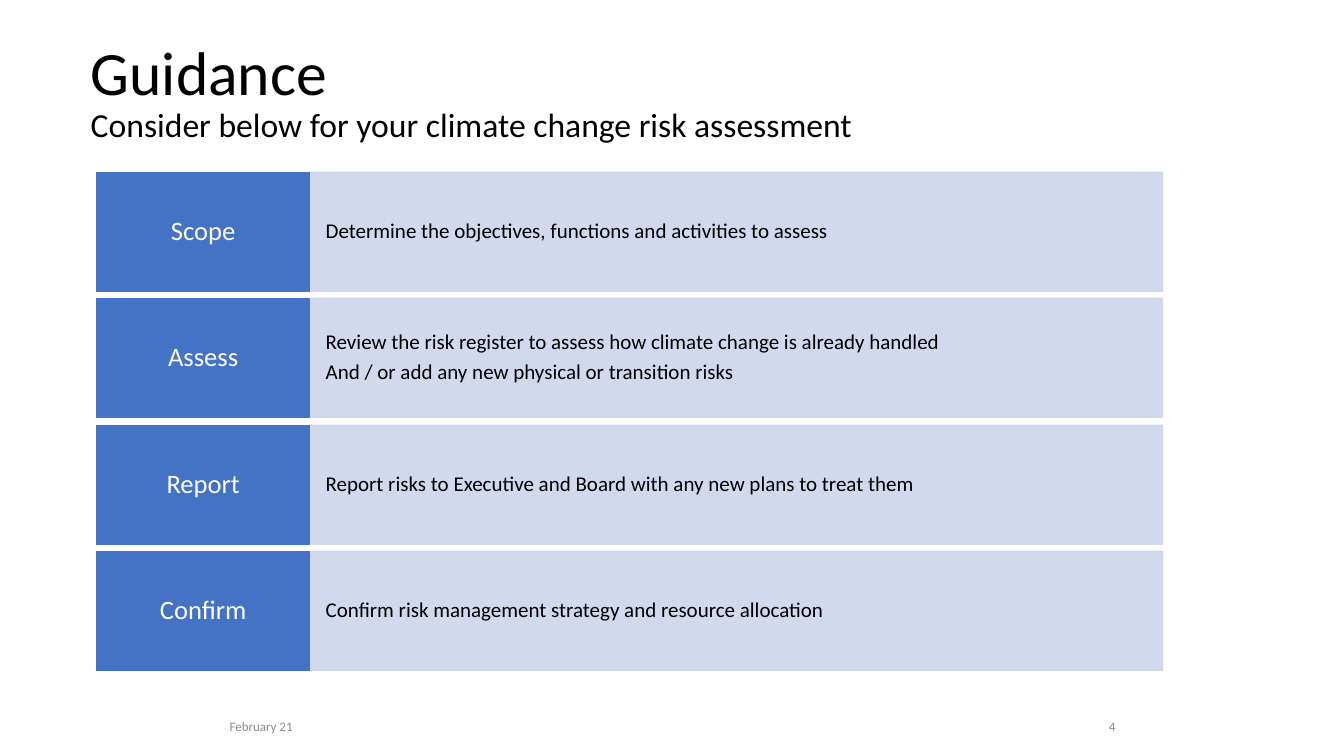
from pptx import Presentation, util as u
from pptx.dml.color import RGBColor
from pptx.enum import shapes, text
from pptx.oxml import parse_xml
from pptx.oxml.ns import nsdecls, qn

BLACK = RGBColor(0, 0, 0)
WHITE = RGBColor(255, 255, 255)
GREY = RGBColor(0x8C, 0x8C, 0x8C)
BLUE = RGBColor(0x44, 0x72, 0xC4)
PALE_BLUE = RGBColor(0xCF, 0xD5, 0xEA)

LEFT, CENTER, RIGHT = text.PP_ALIGN.LEFT, text.PP_ALIGN.CENTER, text.PP_ALIGN.RIGHT
STEPS = [
    ("Scope", ["Determine the objectives, functions and activities to assess"]),
    ("Assess", ["Review the risk register to assess how climate change is already handled",
                "And / or add any new physical or transition risks"]),
    ("Report", ["Report risks to Executive and Board with any new plans to treat them"]),
    ("Confirm", ["Confirm risk management strategy and resource allocation"]),
]


def px(count):
    return u.Emu(count * 9144)


def write(frame, lines, sizes, color=BLACK, align=LEFT, spacing=0.9, after=0, inset=(10, 5)):
    frame.word_wrap = True
    frame.auto_size = text.MSO_AUTO_SIZE.NONE
    frame.vertical_anchor = text.MSO_ANCHOR.MIDDLE
    frame.margin_left = frame.margin_right = px(inset[0])
    frame.margin_top = frame.margin_bottom = px(inset[1])
    for index, (line, size) in enumerate(zip(lines, sizes)):
        paragraph = frame.add_paragraph() if index else frame.paragraphs[0]
        paragraph.alignment = align
        paragraph.line_spacing = spacing
        paragraph.space_after = u.Pt(size * after)
        run = paragraph.add_run()
        run.text = line
        run.font.name = "Calibri"
        run.font.size = u.Pt(size)
        run.font.color.rgb = color


class GuidanceSlide:
    def __init__(self, deck):
        self.slide = deck.slides.add_slide(deck.slide_layouts[5])

    def title(self, box, lines, sizes):
        heading = self.slide.shapes.title
        heading.left, heading.top, heading.width, heading.height = map(px, box)
        write(heading.text_frame, lines, sizes)

    def footer(self, box, line, align=LEFT):
        note = self.slide.shapes.add_textbox(*map(px, box))
        write(note.text_frame, [line], [9.3], color=GREY, align=align, spacing=1.0)

    def panel(self, box, fill, lines, size, opacity=100, **style):
        block = self.slide.shapes.add_shape(shapes.MSO_SHAPE.RECTANGLE, *map(px, box))
        block.shadow.inherit = False
        block.fill.solid()
        block.fill.fore_color.rgb = fill
        block.line.color.rgb = fill
        block.line.width = u.Pt(1)
        if opacity < 100:
            for tint in block.fill._xPr.iter(qn("a:srgbClr")):
                tint.append(parse_xml(f'<a:alpha {nsdecls("a")} val="{opacity * 1000}"/>'))
        write(block.text_frame, lines, [size] * len(lines), after=0.35, **style)


def main():
    deck = Presentation()
    deck.slide_width, deck.slide_height = px(1333), px(750)
    guidance = GuidanceSlide(deck)
    guidance.title((80, 30, 1049, 126),
                   ["Guidance", "Consider below for your climate change risk assessment"],
                   [44, 24])
    guidance.footer((218, 709, 157, 24), "February 21")
    guidance.footer((1037, 709, 79, 24), "4", align=RIGHT)
    for row, (step, advice) in enumerate(STEPS):
        top = 171 + round(row * 125.4)
        guidance.panel((307, top, 846, 118), PALE_BLUE, advice, 15,
                       opacity=90, inset=(16, 30))
        guidance.panel((96, top, 211, 118), BLUE, [step], 19,
                       color=WHITE, align=CENTER, inset=(11, 12))
    deck.save("out.pptx")


if __name__ == "__main__":
    main()
